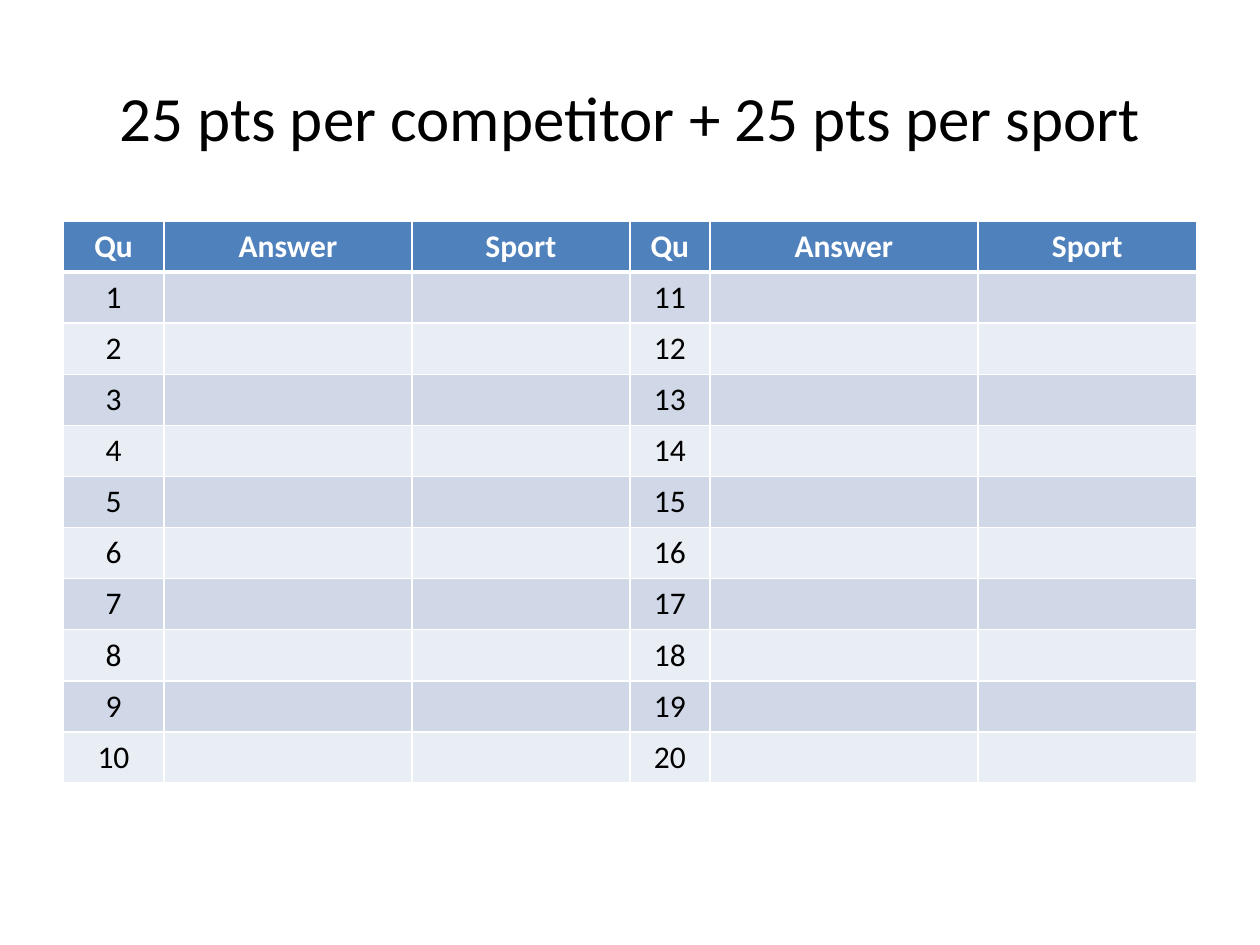
from lxml import etree
from pptx import Presentation
from pptx.dml.color import RGBColor
from pptx.enum.text import MSO_ANCHOR, PP_ALIGN
from pptx.oxml.ns import qn
from pptx.util import Pt

CENTER = PP_ALIGN.CENTER
MIDDLE = MSO_ANCHOR.MIDDLE
PX = 914400 // 126
FONT = "Calibri"

TITLE = "25 pts per competitor + 25 pts per sport"
HEADINGS = ["Qu", "Answer", "Sport"] * 2
QUESTIONS_PER_SIDE = 10
ROWS = [HEADINGS] + [
    [str(number), "", "", str(number + QUESTIONS_PER_SIDE), "", ""]
    for number in range(1, QUESTIONS_PER_SIDE + 1)
]

TITLE_BOX = (63, 38, 1134, 157)
TABLE_LEFT, TABLE_TOP = 63, 221
COLUMN_WIDTHS = [101, 248, 218, 80, 268, 219]
ROW_HEIGHT = 51

WHITE, BLACK = "FFFFFF", "000000"
HEADER_FILL = "4F81BD"
BAND_FILLS = ["D0D8E8", "E9EDF4"]


def color(hex_text):
    return RGBColor.from_string(hex_text)


def add_text(para, text, size, hex_text, bold=False):
    para.alignment = CENTER
    span = para.add_run()
    span.text = text
    span.font.name = FONT
    span.font.size = Pt(size)
    span.font.bold = bold
    span.font.color.rgb = color(hex_text)


def add_borders(cell, top, bottom):
    """Draw white cell borders; top and bottom are widths in points."""
    properties = cell._tc.get_or_add_tcPr()
    for side, width in (("L", 1), ("R", 1), ("T", top), ("B", bottom)):
        line = etree.SubElement(properties, qn(f"a:ln{side}"), w=str(Pt(width)))
        fill = etree.SubElement(line, qn("a:solidFill"))
        etree.SubElement(fill, qn("a:srgbClr"), val=WHITE)


def add_title(slide):
    title = slide.shapes.title
    title.left, title.top, title.width, title.height = [n * PX for n in TITLE_BOX]
    title.text_frame.word_wrap = True
    title.text_frame.vertical_anchor = MIDDLE
    add_text(title.text_frame.paragraphs[0], TITLE, 36, BLACK)


def add_answer_table(slide):
    table = slide.shapes.add_table(
        len(ROWS), len(COLUMN_WIDTHS), TABLE_LEFT * PX, TABLE_TOP * PX,
        sum(COLUMN_WIDTHS) * PX, len(ROWS) * ROW_HEIGHT * PX,
    ).table
    for column, width in zip(table.columns, COLUMN_WIDTHS):
        column.width = width * PX
    for index, (row, texts) in enumerate(zip(table.rows, ROWS)):
        row.height = ROW_HEIGHT * PX
        header = index == 0
        fill = HEADER_FILL if header else BAND_FILLS[(index - 1) % 2]
        for cell, text in zip(row.cells, texts):
            add_borders(cell, top=3 if index == 1 else 1, bottom=3 if header else 1)
            cell.fill.solid()
            cell.fill.fore_color.rgb = color(fill)
            if text:
                add_text(cell.text_frame.paragraphs[0], text, 18,
                         WHITE if header else BLACK, header)


def main():
    deck = Presentation()
    deck.slide_width, deck.slide_height = 1260 * PX, 945 * PX
    slide = deck.slides.add_slide(deck.slide_layouts[5])
    add_title(slide)
    add_answer_table(slide)
    deck.save("out.pptx")


if __name__ == "__main__":
    main()
